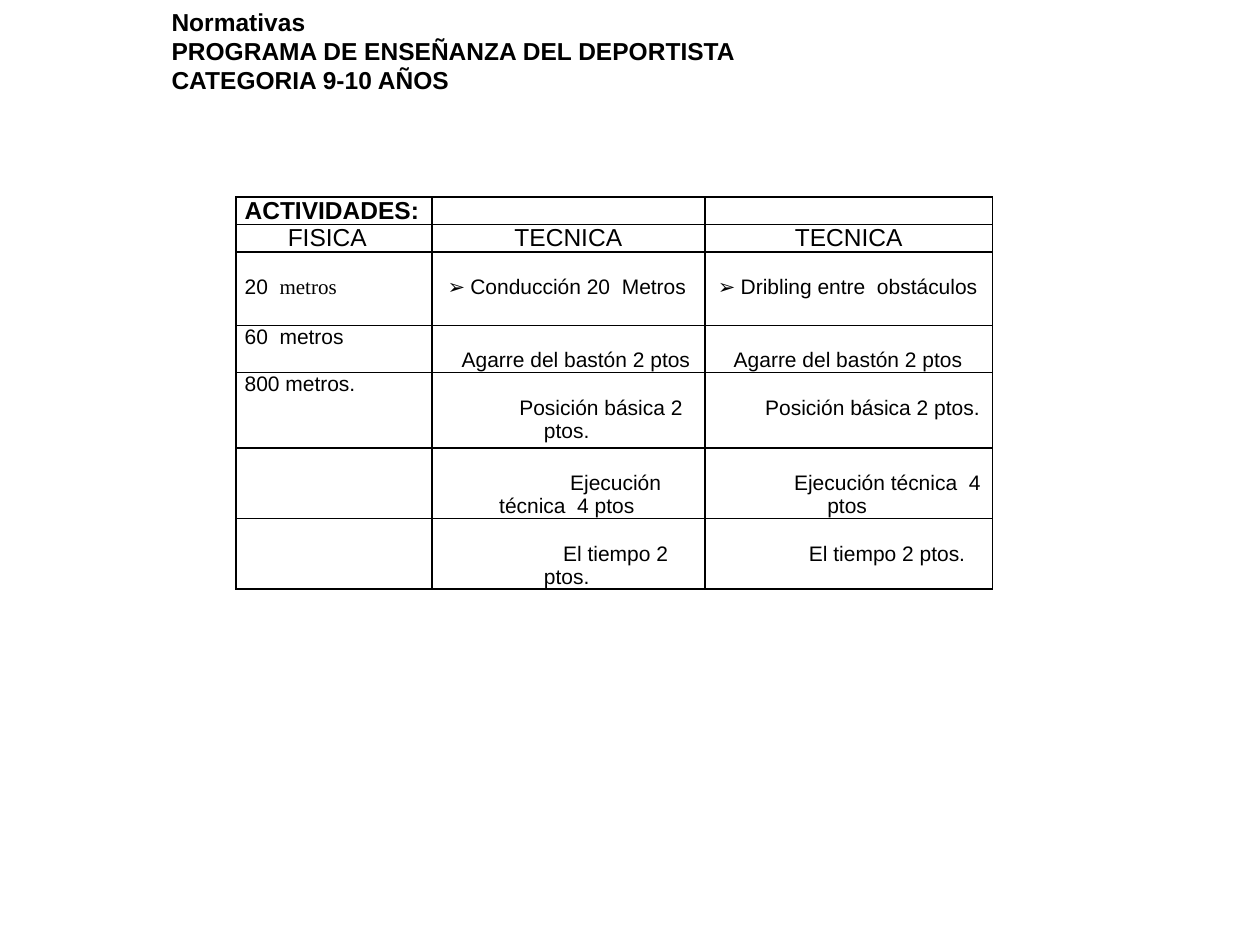
from lxml import etree
from pptx import Presentation
from pptx.dml.color import RGBColor
from pptx.enum.text import MSO_ANCHOR, MSO_AUTO_SIZE, PP_ALIGN
from pptx.oxml.ns import qn
from pptx.util import Pt

LEFT, MID, JUST = PP_ALIGN.LEFT, PP_ALIGN.CENTER, PP_ALIGN.JUSTIFY
MIDDLE, NO_FIT = MSO_ANCHOR.MIDDLE, MSO_AUTO_SIZE.NONE
COLORS = {"ink": "000000"}
INK = RGBColor.from_string(COLORS["ink"])


def write(par, text, size, pitch, align=LEFT, bold=False, face="Arial"):
    """Add a formatted run and set the paragraph's alignment and line pitch."""
    par.alignment, par.line_spacing = align, Pt(pitch)
    par.space_before = par.space_after = Pt(0)
    run = par.add_run()
    run.text = text
    run.font.color.rgb = INK
    for key, val in {"size": Pt(size), "bold": bold, "name": face}.items():
        setattr(run.font, key, val)


def border(cell):
    """Draw a black 1 pt line on each side of the cell."""
    props = cell._tc.get_or_add_tcPr()
    for spot, side in enumerate(("lnL", "lnR", "lnT", "lnB")):
        line = etree.Element(qn("a:" + side), w=str(Pt(1)))
        fill = etree.SubElement(line, qn("a:solidFill"))
        etree.SubElement(fill, qn("a:srgbClr"), val=COLORS["ink"])
        props.insert(spot, line)


prs = Presentation()
prs.slide_width, prs.slide_height = Pt(720), Pt(540)
slide = prs.slides.add_slide(prs.slide_layouts[5])

# Title
title = slide.shapes.title
title.left, title.top, title.width, title.height = Pt(45), Pt(0), Pt(675), Pt(58)
frame = title.text_frame
for key, val in {"auto_size": NO_FIT, "vertical_anchor": MIDDLE, "word_wrap": True,
                 "margin_left": Pt(53), "margin_top": 0, "margin_bottom": 0}.items():
    setattr(frame, key, val)
lines = ["Normativas", "PROGRAMA DE ENSEÑANZA DEL DEPORTISTA", "CATEGORIA 9-10 AÑOS"]
for num, text in enumerate(lines):
    par = frame.paragraphs[0] if num == 0 else frame.add_paragraph()
    write(par, text, 14, 16.8, bold=True)

# Table grid
widths = [112, 156, 164.5]
heights = [15.7, 15.7, 42, 27, 43, 40.5, 40.3]
table = slide.shapes.add_table(7, 3, Pt(134.8), Pt(112.6),
                               Pt(sum(widths)), Pt(sum(heights))).table
table.first_row = table.horz_banding = False
for col, width in zip(table.columns, widths):
    col.width = Pt(width)
for row, height in zip(table.rows, heights):
    row.height = Pt(height)
for cell in table.iter_cells():
    cell.fill.background()
    border(cell)
    cell.margin_left, cell.margin_right = Pt(5), Pt(2)
    cell.margin_top = cell.margin_bottom = 0

# Headings
write(table.cell(0, 0).text_frame.paragraphs[0], "ACTIVIDADES:", 14, 15.6, JUST, True)
for col, (text, right) in enumerate([("FISICA", 12.5), ("TECNICA", 5), ("TECNICA", 5)]):
    cell = table.cell(1, col)
    cell.margin_right = Pt(right)
    write(cell.text_frame.paragraphs[0], text, 14, 15.6, MID)

# Physical tests
par = table.cell(2, 0).text_frame.paragraphs[0]
table.cell(2, 0).margin_top = Pt(13.4)
write(par, "20  ", 12, 13.4)
write(par, "metros", 12, 13.4, face="Times New Roman")
for row, text in [(3, "60  metros"), (4, "800 metros.")]:
    write(table.cell(row, 0).text_frame.paragraphs[0], text, 12, 13.4)

# Technical tests: row, column, text, indent of first line, indent of later lines
tests = [
    (2, 1, "Conducción 20  Metros", 9, 22),
    (2, 2, "Dribling entre  obstáculos", 7.5, 20.5),
    (3, 1, "Agarre del bastón 2 ptos", 17, 17),
    (3, 2, "Agarre del bastón 2 ptos", 16.5, 16.5),
    (4, 1, "Posición básica 2 ptos.", 50, 64),
    (4, 2, "Posición básica 2 ptos.", 34.5, 34.5),
    (5, 1, "Ejecución técnica  4 ptos", 79, 38.5),
    (5, 2, "Ejecución técnica  4 ptos", 51, 70),
    (6, 1, "El tiempo 2 ptos.", 75, 64),
    (6, 2, "El tiempo 2 ptos.", 59.5, 59.5),
]
for row, col, text, first, rest in tests:
    cell = table.cell(row, col)
    cell.margin_left, cell.margin_top = 0, Pt(13.4)
    par = cell.text_frame.paragraphs[0]
    write(par, text, 12, 13.4)
    props = par._p.get_or_add_pPr()
    props.set("marL", str(Pt(rest)))
    props.set("indent", str(Pt(first) - Pt(rest)))
    if row == 2:
        etree.SubElement(props, qn("a:buFont"), typeface="Arial")
        etree.SubElement(props, qn("a:buChar"), char="➢")

# Keep empty cells from stretching their rows
for cell in table.iter_cells():
    if not cell.text:
        par = cell.text_frame.paragraphs[0]
        par.line_spacing = Pt(13.4)
        etree.SubElement(par._p, qn("a:endParaRPr"), sz="1200")

prs.save("out.pptx")
